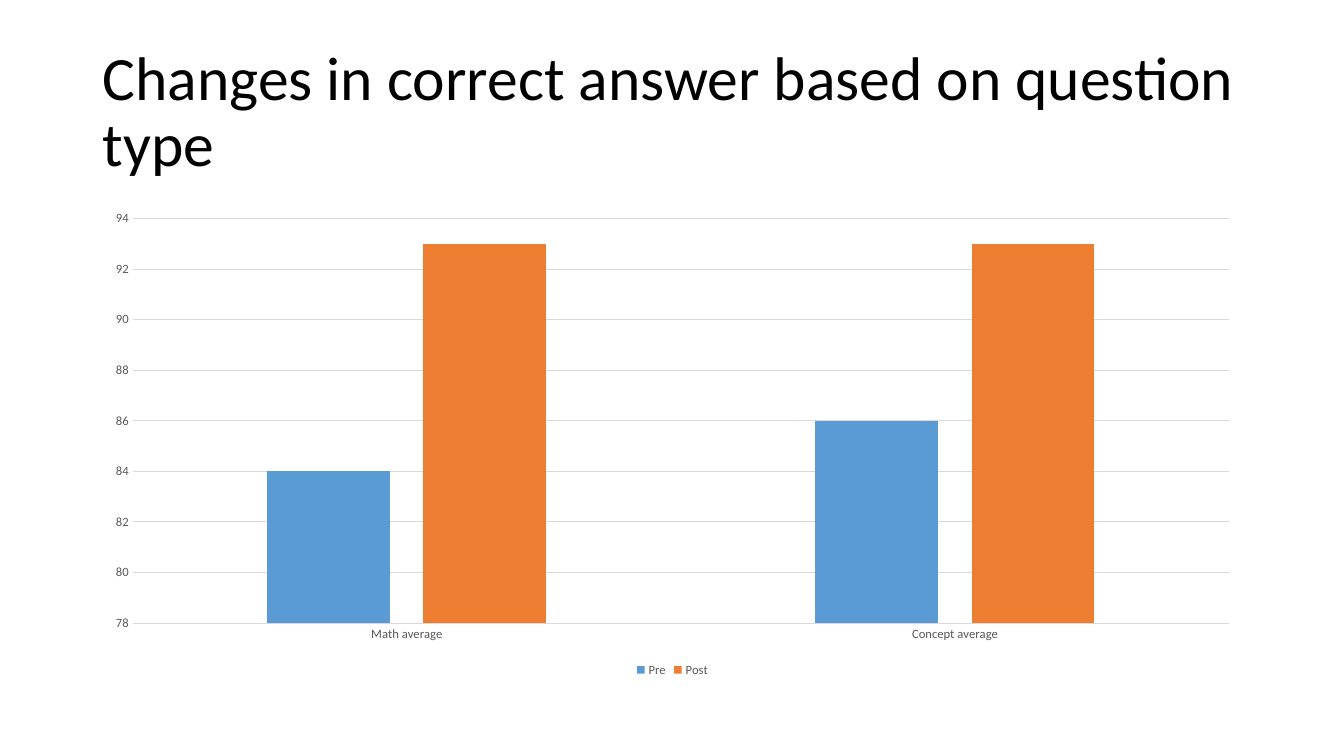
"""Build a slide with a column chart of correct answers by question type."""
from dataclasses import dataclass

from pptx import Presentation
from pptx.chart.data import CategoryChartData
from pptx.dml.color import RGBColor
from pptx.enum import chart as ch, text as tx
from pptx.util import Inches, Pt


@dataclass(frozen=True)
class Theme:
    font: str = "Calibri"
    ink: str = "000000"
    grey: str = "595959"
    rule: str = "D9D9D9"
    head: float = 44
    base: float = 10
    small: float = 9
    thin: float = 0.75


@dataclass(frozen=True)
class Series:
    name: str
    vals: tuple[float, ...]
    color: str


THEME = Theme()
LEFT, WIDTH = Inches(0.92), Inches(11.5)
KINDS = ("Math average", "Concept average")
TESTS = (
    Series("Pre", (84, 86), "5B9BD5"),
    Series("Post", (93, 93), "ED7D31"),
)


def style(font, size: float, color: str) -> None:
    font.name = THEME.font
    font.size = Pt(size)
    font.color.rgb = RGBColor.from_string(color)


def rule(line) -> None:
    line.color.rgb = RGBColor.from_string(THEME.rule)
    line.width = Pt(THEME.thin)


def write(slide, words: str, *, top: float, high: float, size: float,
          color: str, space: float) -> None:
    frame = slide.shapes.add_textbox(LEFT, Inches(top), WIDTH, Inches(high)).text_frame
    frame.word_wrap = True
    frame.vertical_anchor = tx.MSO_ANCHOR.MIDDLE
    para = frame.paragraphs[0]
    para.line_spacing = space
    run = para.add_run()
    run.text = words
    style(run.font, size, color)


def plot(slide, kinds: tuple[str, ...], tests: tuple[Series, ...], *,
         top: float, high: float) -> None:
    data = CategoryChartData()
    data.categories = kinds
    for test in tests:
        data.add_series(test.name, test.vals)
    chart = slide.shapes.add_chart(
        ch.XL_CHART_TYPE.COLUMN_CLUSTERED, LEFT, Inches(top), WIDTH, Inches(high), data
    ).chart
    style(chart.font, THEME.base, THEME.ink)
    chart.has_title = False
    chart.has_legend = True
    chart.legend.position = ch.XL_LEGEND_POSITION.BOTTOM
    chart.legend.include_in_layout = False
    style(chart.legend.font, THEME.small, THEME.grey)

    bars = chart.plots[0]
    bars.gap_width, bars.overlap, bars.vary_by_categories = 219, -27, False
    for bar, test in zip(bars.series, tests):
        bar.format.fill.solid()
        bar.format.fill.fore_color.rgb = RGBColor.from_string(test.color)

    base, scale = chart.category_axis, chart.value_axis
    for axis in (base, scale):
        axis.major_tick_mark = axis.minor_tick_mark = ch.XL_TICK_MARK.NONE
        style(axis.tick_labels.font, THEME.small, THEME.grey)
    rule(base.format.line)
    scale.format.line.fill.background()
    scale.minimum_scale, scale.maximum_scale, scale.major_unit = 78, 94, 2
    scale.has_major_gridlines = True
    rule(scale.major_gridlines.format.line)


def main() -> None:
    deck = Presentation()
    deck.slide_width, deck.slide_height = Inches(13.33), Inches(7.5)
    slide = deck.slides.add_slide(deck.slide_layouts[6])
    write(slide, "Changes in correct answer based on question type",
          top=0.4, high=1.45, size=THEME.head, color=THEME.ink, space=0.9)
    plot(slide, KINDS, TESTS, top=2, high=4.76)
    deck.save("out.pptx")


if __name__ == "__main__":
    main()
